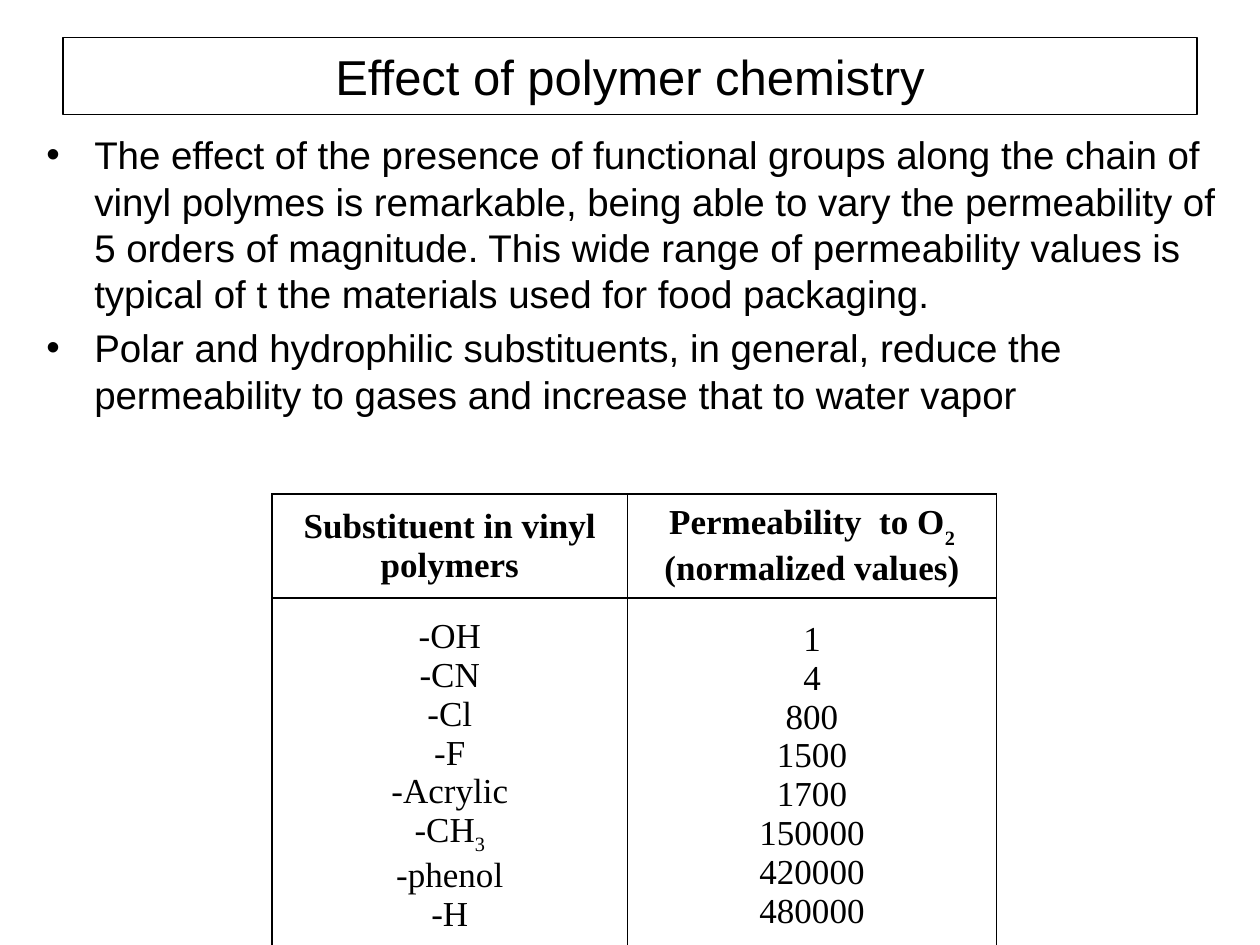
from pptx import Presentation
from pptx.dml.color import RGBColor
from pptx.enum.shapes import MSO_SHAPE as Shape
from pptx.enum.text import MSO_ANCHOR as Anchor, PP_ALIGN as Align
from pptx.oxml import parse_xml
from pptx.oxml.ns import nsdecls
from pptx.util import Inches, Pt

INK = "000000"
HEAD = [
    [[("Substituent in vinyl polymers", 0)]],
    [[("Permeability  to O", 0), ("2 ", -30), ("(normalized values)", 0)]],
]
GROUPS = ["-OH", "-CN", "-Cl", "-F", "-Acrylic", "-CH", "-phenol", "-H"]
VALUES = ["1", "4", "800", "1500", "1700", "150000", "420000", "480000"]
POINTS = [
    "The effect of the presence of functional groups along the chain of vinyl "
    "polymes is remarkable, being able to vary the permeability of 5 orders of "
    "magnitude. This wide range of permeability values is typical of t the "
    "materials used for food packaging.",
    "Polar and hydrophilic substituents, in general, reduce the permeability "
    "to gases and increase that to water vapor",
]


def color(text):
    return RGBColor.from_string(text)


def apply(thing, style):
    for name, value in style.items():
        setattr(thing, name, value)


class Page:
    title_font = {"name": "Arial", "size": Pt(28)}
    body_font = {"name": "Arial", "size": Pt(22)}
    cell_font = {"name": "Times New Roman", "size": Pt(20), "bold": False}
    head_font = {**cell_font, "bold": True}
    center = {"alignment": Align.CENTER}
    body_form = {"line_spacing": Pt(26.5), "space_before": Pt(4.4),
                 "alignment": Align.LEFT}

    def __init__(self, slide):
        self.slide = slide

    def fill_text(self, frame, lines, font, form):
        for i, line in enumerate(lines):
            para = frame.paragraphs[0] if i == 0 else frame.add_paragraph()
            apply(para, form)
            for text, base in line:
                run = para.add_run()
                run.text = text
                apply(run.font, font)
                run.font.color.rgb = color(INK)
                if base:
                    run._r.get_or_add_rPr().set("baseline", str(base * 1000))

    def title(self, text, *box):
        shape = self.slide.shapes.add_shape(Shape.RECTANGLE, *map(Inches, box))
        shape.shadow.inherit = False
        shape.fill.background()
        shape.line.color.rgb = color(INK)
        shape.line.width = Pt(0.75)
        shape.text_frame.vertical_anchor = Anchor.MIDDLE
        self.fill_text(shape.text_frame, [[(text, 0)]], self.title_font, self.center)

    def bullets(self, items, *box):
        frame = self.slide.shapes.add_textbox(*map(Inches, box)).text_frame
        frame.word_wrap = True
        lines = [[(item, 0)] for item in items]
        self.fill_text(frame, lines, self.body_font, self.body_form)
        for para in frame.paragraphs:
            props = para._p.get_or_add_pPr()
            props.set("marL", str(Inches(0.38)))
            props.set("indent", str(-Inches(0.38)))
            props.append(parse_xml(f'<a:buFont {nsdecls("a")} typeface="Arial"/>'))
            props.append(parse_xml(f'<a:buChar {nsdecls("a")} char="•"/>'))

    def border(self, cell):
        props = cell._tc.get_or_add_tcPr()
        for i, side in enumerate(["lnL", "lnR", "lnT", "lnB"]):
            props.insert(i, parse_xml(
                f'<a:{side} {nsdecls("a")} w="{Pt(1)}"><a:solidFill>'
                f'<a:srgbClr val="{INK}"/></a:solidFill></a:{side}>'))

    def table(self, rows, wide, high, left, top):
        box = map(Inches, (left, top, sum(wide), sum(high)))
        grid = self.slide.shapes.add_table(len(high), len(wide), *box).table
        for col, size in zip(grid.columns, wide):
            col.width = Inches(size)
        for r, row in enumerate(rows):
            grid.rows[r].height = Inches(high[r])
            for c, lines in enumerate(row):
                cell = grid.cell(r, c)
                cell.fill.background()
                cell.vertical_anchor = Anchor.MIDDLE
                font = self.cell_font if r else self.head_font
                self.fill_text(cell.text_frame, lines, font, self.center)
                self.border(cell)


def main():
    deck = Presentation()
    deck.slide_width, deck.slide_height = Inches(10), Inches(7.5)
    page = Page(deck.slides.add_slide(deck.slide_layouts[6]))
    page.title("Effect of polymer chemistry", 0.5, 0.3, 9, 0.61)
    page.bullets(POINTS, 0.27, 0.99, 9.61, 4.95)
    groups = [[(g, 0)] + [("3", -25)] * (g == "-CH") for g in GROUPS]
    values = [[(v, 0)] for v in VALUES]
    page.table([HEAD, [groups, values]], [2.82, 2.93], [0.81, 2.77], 2.16, 3.92)
    deck.save("out.pptx")


if __name__ == "__main__":
    main()
